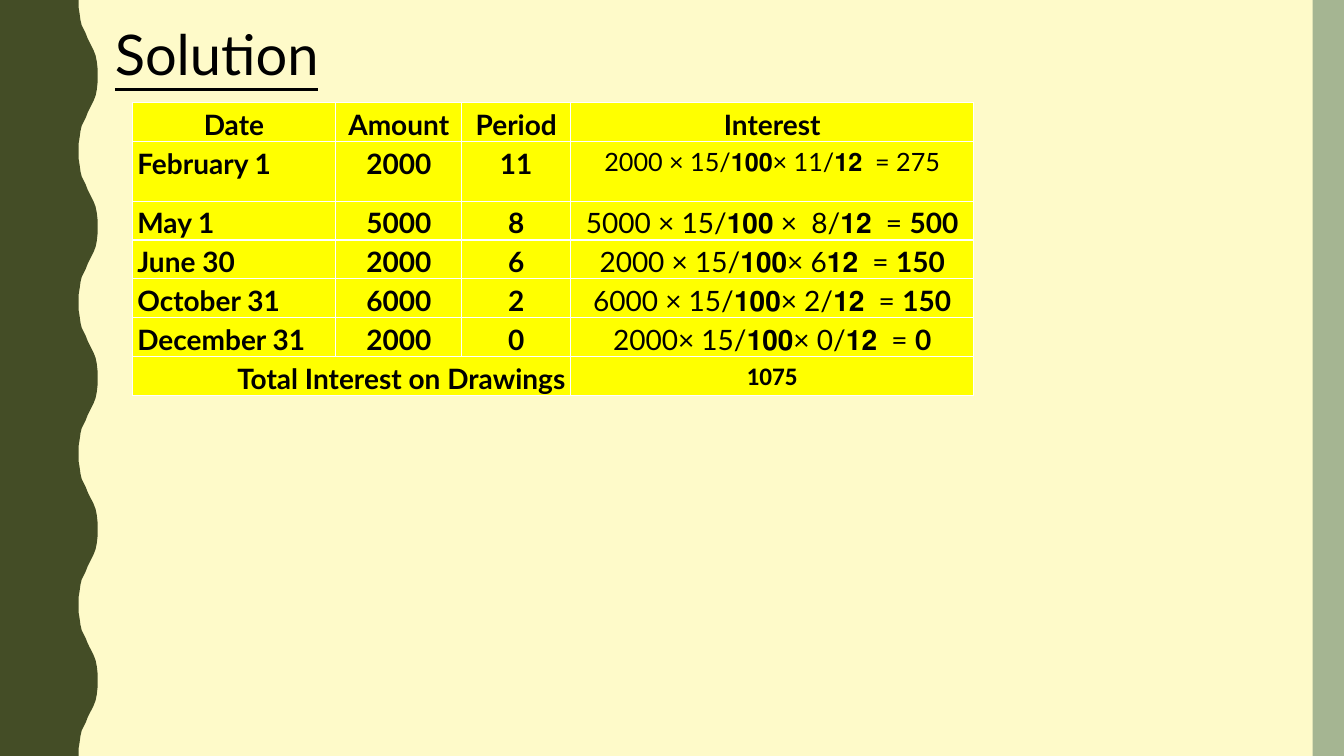
import pptx
import pptx.util
import pptx.dml.color
import pptx.enum.shapes
import pptx.enum.text

Cm = pptx.util.Cm
Pt = pptx.util.Pt
Align = pptx.enum.text.PP_ALIGN

COLOURS = {
    "cream": "FEFAC9",
    "olive": "444D26",
    "sage": "A5B592",
    "yellow": "FFFF00",
    "black": "000000",
}
WAVE_COUNT = 5
WAVE_HEIGHT = 3.81
HALF_WAVE = [
    (1.98, 0), (1.98, 0.18), (2.01, 0.36), (2.03, 0.51), (2.06, 0.64),
    (2.11, 0.74), (2.16, 0.84), (2.21, 0.97), (2.26, 1.07), (2.31, 1.17),
    (2.36, 1.27), (2.41, 1.4), (2.44, 1.55), (2.46, 1.73), (2.46, 1.9),
]
COLUMN_WIDTHS = [5.13, 3.18, 2.74, 10.16]
HEADINGS = ["Date", "Amount", "Period", "Interest"]
DRAWINGS = [
    ("February 1", "2000", "11", "2000 × 15/𝟏𝟎𝟎× 11/𝟏𝟐  = 275", ""),
    ("May 1", "5000", "8", "5000 × 15/𝟏𝟎𝟎 ×  8/𝟏𝟐  = ", "500"),
    ("June 30", "2000", "6", "2000 × 15/𝟏𝟎𝟎× 6𝟏𝟐  = ", "150"),
    ("October 31", "6000", "2", "6000 × 15/𝟏𝟎𝟎× 2/𝟏𝟐  = ", "150"),
    ("December 31", "2000", "0", "2000× 15/𝟏𝟎𝟎× 0/𝟏𝟐  = ", "0"),
]


def colour(name):
    """Return the named colour."""
    return pptx.dml.color.RGBColor.from_string(COLOURS[name])


def paint(shape, name):
    """Give a shape a flat fill with no line or shadow."""
    shape.fill.solid()
    shape.fill.fore_color.rgb = colour(name)
    shape.line.fill.background()
    shape.shadow.inherit = False


def style_font(font, size, name="Lato"):
    """Set the typeface, size and colour of a font."""
    font.name = name
    font.size = Pt(size)
    font.color.rgb = colour("black")


def add_wavy_edge(page, height):
    """Draw the olive band with its wavy right side."""
    wave = HALF_WAVE + [(x, WAVE_HEIGHT - y) for x, y in reversed(HALF_WAVE[1:-1])]
    points = [(x, y + number * WAVE_HEIGHT) for number in range(WAVE_COUNT) for x, y in wave]
    points.append((HALF_WAVE[0][0], WAVE_COUNT * WAVE_HEIGHT))
    builder = page.shapes.build_freeform(0, 0)
    outline = [(Cm(x), Cm(y)) for x, y in points]
    builder.add_line_segments(outline + [(0, height)], close=True)
    paint(builder.convert_to_shape(), "olive")


def add_side_bar(page, deck):
    """Draw the sage bar on the right."""
    width = Cm(0.79)
    bar = page.shapes.add_shape(
        pptx.enum.shapes.MSO_SHAPE.RECTANGLE,
        deck.slide_width - width, 0, width, deck.slide_height)
    paint(bar, "sage")


def set_title(page, text):
    """Place and format the underlined title."""
    title = page.shapes.title
    title.left, title.top, title.width, title.height = Cm(2.64), Cm(0.36), Cm(5.69), Cm(1.96)
    frame = title.text_frame
    frame.text = text
    frame.word_wrap = False
    frame.auto_size = pptx.enum.text.MSO_AUTO_SIZE.NONE
    frame.vertical_anchor = pptx.enum.text.MSO_ANCHOR.TOP
    para = frame.paragraphs[0]
    para.alignment = Align.LEFT
    style_font(para.font, 40)
    para.font.underline = True


def fill_cell(cell, spans, align=Align.CENTER, size=20, typeface="Lato"):
    """Write (text, bold) spans into a yellow cell."""
    cell.fill.solid()
    cell.fill.fore_color.rgb = colour("yellow")
    cell.margin_left = cell.margin_right = Cm(0.13)
    cell.margin_top = cell.margin_bottom = 0
    para = cell.text_frame.paragraphs[0]
    para.alignment = align
    para.line_spacing = 1.15
    style_font(para.font, size, typeface)
    for text, bold in spans:
        span = para.add_run()
        span.text = text
        span.font.bold = bold


def add_interest_table(page):
    """Build the table of interest on drawings."""
    row_count = len(DRAWINGS) + 2
    table = page.shapes.add_table(
        row_count, len(HEADINGS), Cm(3.33), Cm(2.59),
        Cm(sum(COLUMN_WIDTHS)), Cm(7.34)).table
    table.horz_banding = False
    for column, width in zip(table.columns, COLUMN_WIDTHS):
        column.width = Cm(width)
    for row in table.rows:
        row.height = Cm(0.97)
    table.rows[1].height = Cm(1.5)

    for index, heading in enumerate(HEADINGS):
        fill_cell(table.cell(0, index), [(heading, True)])
    for row, (date, amount, period, formula, result) in enumerate(DRAWINGS, 1):
        fill_cell(table.cell(row, 0), [(date, True)], Align.JUSTIFY)
        fill_cell(table.cell(row, 1), [(amount, True)])
        fill_cell(table.cell(row, 2), [(period, True)])
        spans = [(formula, False)] + ([(result, True)] if result else [])
        fill_cell(table.cell(row, 3), spans, size=20 if result else 18)

    last = row_count - 1
    table.cell(last, 0).merge(table.cell(last, 2))
    fill_cell(table.cell(last, 0), [("Total Interest on Drawings", True)], Align.RIGHT)
    fill_cell(table.cell(last, 3), [("1075", True)], size=18, typeface="Calibri")


def main():
    """Build and save the slide."""
    deck = pptx.Presentation()
    deck.slide_width, deck.slide_height = Cm(33.87), Cm(19.05)
    page = deck.slides.add_slide(deck.slide_layouts[5])
    page.background.fill.solid()
    page.background.fill.fore_color.rgb = colour("cream")
    add_wavy_edge(page, deck.slide_height)
    add_side_bar(page, deck)
    add_interest_table(page)
    set_title(page, "Solution")
    deck.save("out.pptx")


if __name__ == "__main__":
    main()
